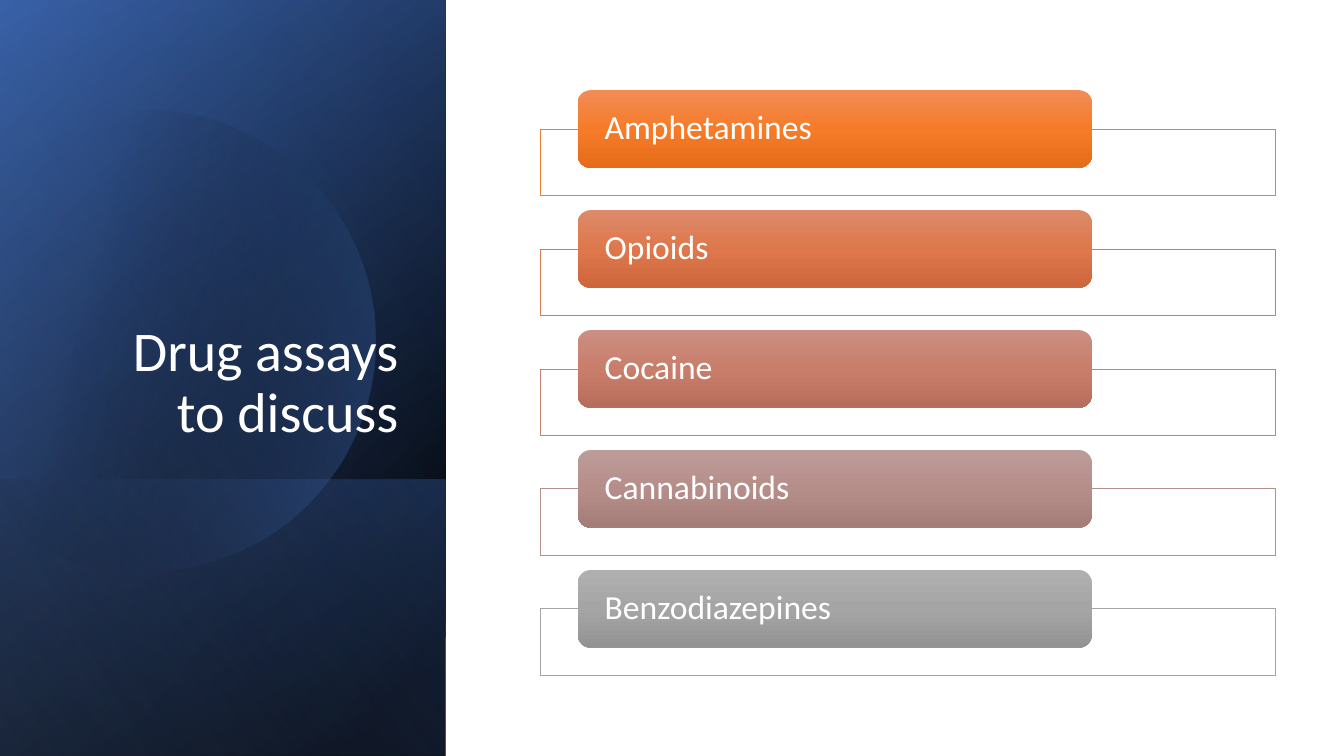
from math import acos, cos, pi, sin

from pptx import Presentation
from pptx.dml.color import RGBColor
from pptx.enum.shapes import MSO_SHAPE
from pptx.enum.text import MSO_ANCHOR, PP_ALIGN
from pptx.oxml import parse_xml
from pptx.oxml.ns import nsdecls, qn
from pptx.util import Inches, Pt

FONT = "Calibri"
WHITE = RGBColor(0xFF, 0xFF, 0xFF)
BLACK = RGBColor(0x00, 0x00, 0x00)
NAVY = RGBColor(0x2F, 0x55, 0x97)
BLUE = RGBColor(0x44, 0x72, 0xC4)
PALE_BLUE = RGBColor(0x8F, 0xAA, 0xDC)

# Name, frame colour, then the top, middle and bottom colours of the label
ASSAYS = [
    ("Amphetamines", RGBColor(0xED, 0x7D, 0x31),
     (RGBColor(0xF1, 0x8C, 0x57), RGBColor(0xF6, 0x7B, 0x28), RGBColor(0xE5, 0x6C, 0x19))),
    ("Opioids", RGBColor(0xD8, 0x7A, 0x51),
     (RGBColor(0xDD, 0x8A, 0x6A), RGBColor(0xDE, 0x77, 0x4B), RGBColor(0xCD, 0x67, 0x3B))),
    ("Cocaine", RGBColor(0xC4, 0x81, 0x70),
     (RGBColor(0xCB, 0x8F, 0x81), RGBColor(0xC9, 0x7E, 0x6B), RGBColor(0xB7, 0x6D, 0x5B))),
    ("Cannabinoids", RGBColor(0xB4, 0x90, 0x8B),
     (RGBColor(0xBC, 0x9C, 0x99), RGBColor(0xB6, 0x8E, 0x89), RGBColor(0xA4, 0x7C, 0x78))),
    ("Benzodiazepines", RGBColor(0xA5, 0xA5, 0xA5),
     (RGBColor(0xAF, 0xAF, 0xAF), RGBColor(0xA5, 0xA5, 0xA5), RGBColor(0x93, 0x93, 0x93))),
]
FIRST_FRAME_TOP = 1.28
ROW_STEP = 1.19
LABEL_RISE = 0.385

PANEL_WIDTH = 4.42
PANEL_CENTRE = PANEL_WIDTH / 2


def set_gradient(shape, stops, angle):
    """Fill with (position, colour, opacity) stops, both numbers in percent."""
    stop_xml = "".join(
        f'<a:gs pos="{position * 1000}"><a:srgbClr val="{colour}">'
        f'<a:alpha val="{opacity * 1000}"/></a:srgbClr></a:gs>'
        for position, colour, opacity in stops
    )
    gradient = parse_xml(
        f'<a:gradFill {nsdecls("a")} rotWithShape="1"><a:gsLst>{stop_xml}</a:gsLst>'
        f'<a:lin ang="{angle * 60000}" scaled="0"/></a:gradFill>'
    )
    shape.fill.background()
    properties = shape._element.spPr
    properties.replace(properties.find(qn("a:noFill")), gradient)
    shape.line.fill.background()
    shape.shadow.inherit = False


def add_panel_layer(slide, top, height, stops, angle):
    """Add a mirrored rectangle, turned a quarter, across the left panel."""
    layer = slide.shapes.add_shape(
        MSO_SHAPE.RECTANGLE,
        Inches(PANEL_CENTRE - height / 2), Inches(top + height / 2 - PANEL_CENTRE),
        Inches(height), Inches(PANEL_WIDTH),
    )
    layer.rotation = 90
    layer._element.spPr.xfrm.set("flipH", "1")
    set_gradient(layer, stops, angle)


def add_panel_disc(slide):
    """Add the large disc that is cut off near the left slide edge."""
    centre_x, centre_y, radius, cut_x = 1.43, 3.38, 2.29, -0.15
    reach = acos((cut_x - centre_x) / radius)
    steps = 120
    angles = [-reach + 2 * reach * step / steps for step in range(steps + 1)]
    points = [
        (Inches(centre_x + radius * cos(angle)), Inches(centre_y + radius * sin(angle)))
        for angle in angles
    ]
    builder = slide.shapes.build_freeform(*points[0])
    builder.add_line_segments(points[1:], close=True)
    set_gradient(builder.convert_to_shape(), [(29, BLACK, 0), (100, BLUE, 43)], 14)


def add_title(slide, text):
    title = slide.shapes.title
    title.left, title.top = Inches(0.64), Inches(1.84)
    title.width, title.height = Inches(3.41), Inches(2.62)
    frame = title.text_frame
    frame.text = text
    frame.word_wrap = True
    frame.vertical_anchor = MSO_ANCHOR.BOTTOM
    style_paragraph(frame.paragraphs[0], 40, PP_ALIGN.RIGHT)
    # Bring the title in front of the panel layers
    slide.shapes._spTree.append(title._element)


def style_paragraph(paragraph, size, alignment):
    paragraph.alignment = alignment
    paragraph.line_spacing = 0.9
    paragraph.font.name = FONT
    paragraph.font.size = Pt(size)
    paragraph.font.color.rgb = WHITE


def add_frame(slide, top, colour):
    frame = slide.shapes.add_shape(
        MSO_SHAPE.RECTANGLE, Inches(5.36), Inches(top), Inches(7.29), Inches(0.66)
    )
    frame.shadow.inherit = False
    frame.fill.solid()
    frame.fill.fore_color.rgb = WHITE
    frame.line.color.rgb = colour
    frame.line.width = Pt(0.5)


def add_label(slide, top, text, colours):
    label = slide.shapes.add_shape(
        MSO_SHAPE.ROUNDED_RECTANGLE, Inches(5.73), Inches(top), Inches(5.1), Inches(0.77)
    )
    stops = [(position, colour, 100) for position, colour in zip((0, 50, 100), colours)]
    set_gradient(label, stops, 90)
    frame = label.text_frame
    frame.text = text
    frame.word_wrap = True
    frame.vertical_anchor = MSO_ANCHOR.MIDDLE
    frame.margin_left = frame.margin_right = Inches(0.23)
    frame.margin_top = frame.margin_bottom = 0
    style_paragraph(frame.paragraphs[0], 24, PP_ALIGN.LEFT)


def main():
    deck = Presentation()
    deck.slide_width, deck.slide_height = Inches(13.33), Inches(7.5)
    slide = deck.slides.add_slide(deck.slide_layouts[5])

    add_panel_layer(slide, 0, 7.5, [(8, BLACK, 100), (100, NAVY, 100)], 50)
    add_panel_layer(slide, 0, 7.5, [(0, BLACK, 0), (99, BLUE, 46)], 30)
    add_panel_layer(slide, 4.76, 2.74, [(2, BLUE, 29), (100, BLACK, 30)], 130)
    add_panel_disc(slide)
    add_panel_layer(slide, 0, 7.5, [(0, BLACK, 0), (99, PALE_BLUE, 11)], 120)
    add_title(slide, "Drug assays to discuss")

    for row, (name, frame_colour, label_colours) in enumerate(ASSAYS):
        top = FIRST_FRAME_TOP + row * ROW_STEP
        add_frame(slide, top, frame_colour)
        add_label(slide, top - LABEL_RISE, name, label_colours)

    deck.save("out.pptx")


if __name__ == "__main__":
    main()
